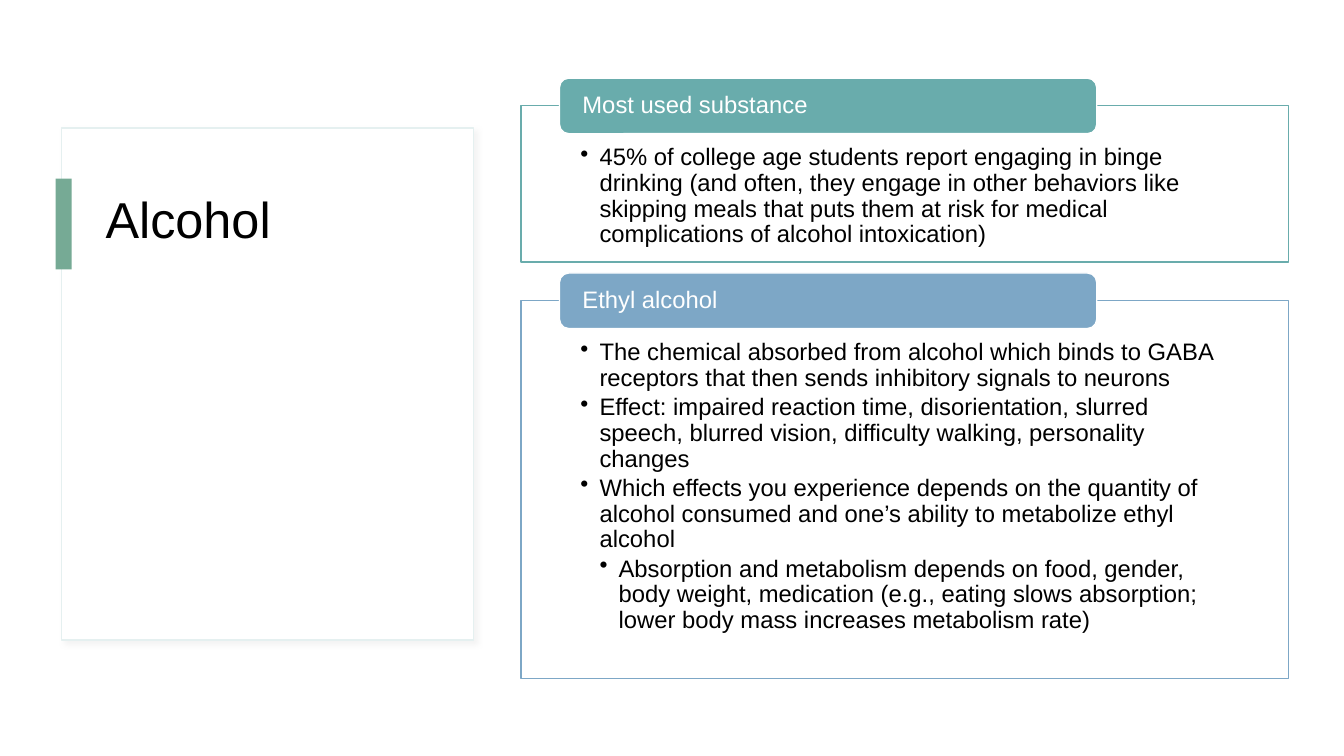
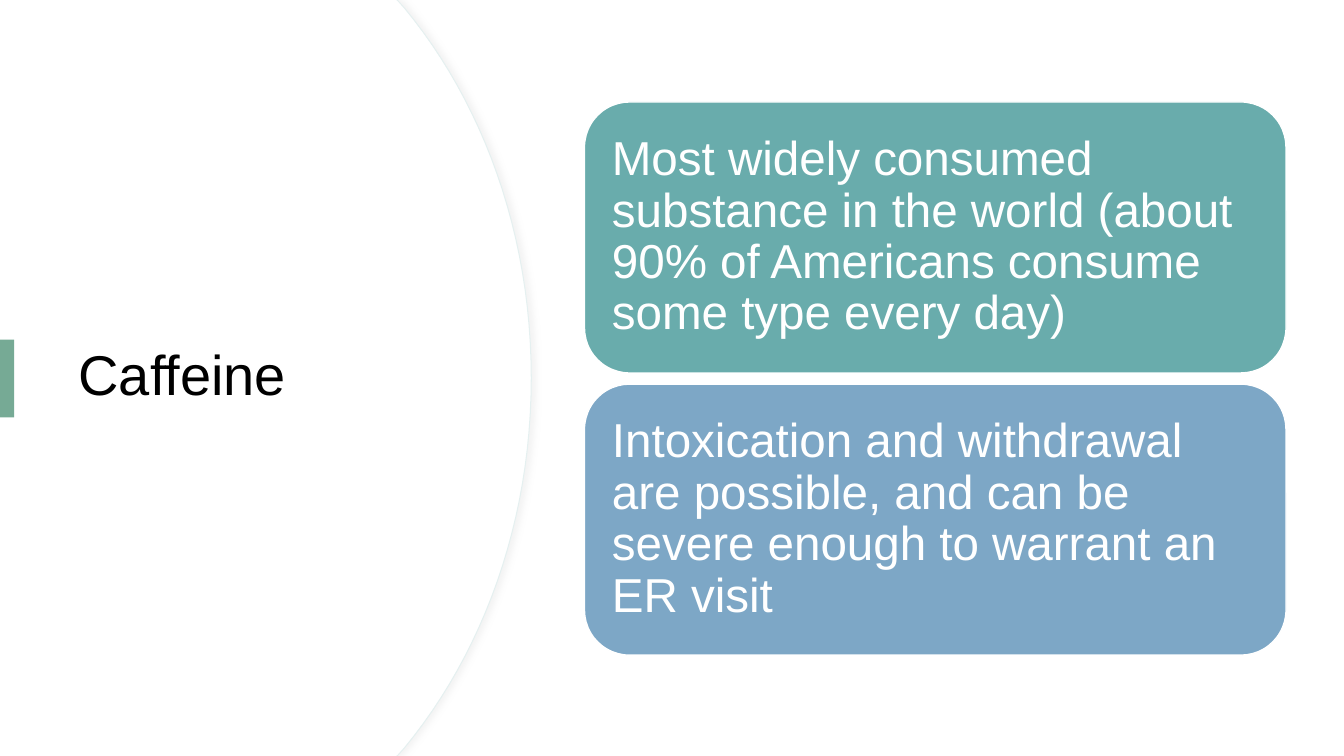
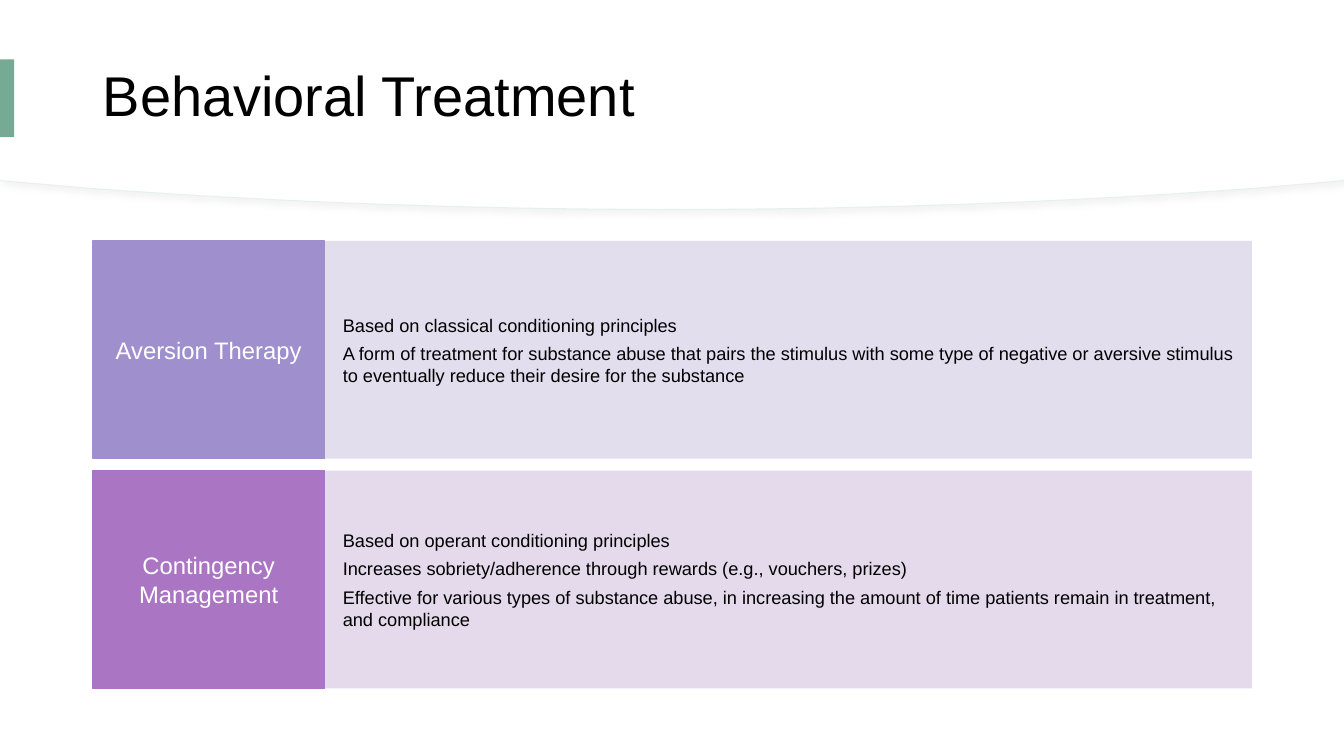
from lxml import etree
from pptx import Presentation
from pptx.dml.color import RGBColor
from pptx.enum.shapes import MSO_SHAPE
from pptx.enum.text import MSO_ANCHOR, PP_ALIGN
from pptx.oxml.ns import qn
from pptx.util import Cm, Pt

RECTANGLE = MSO_SHAPE.RECTANGLE
ROUNDED = MSO_SHAPE.ROUNDED_RECTANGLE
TOP, MIDDLE = MSO_ANCHOR.TOP, MSO_ANCHOR.MIDDLE
LEFT, CENTER = PP_ALIGN.LEFT, PP_ALIGN.CENTER

WIDTH, HEIGHT = 33.87, 19.05
FONT = "Arial"
BULLET_INDENT = 0.48
COLORS = {
    "white": "FFFFFF",
    "black": "000000",
    "edge": "E5F0F0",
    "shadow": "D9D9D9",
    "accent": "76AA95",
    "teal": "69ACAC",
    "blue": "7DA7C6",
    "violet": "9F8FCD",
    "violet_pale": "DFDBED",
    "purple": "AA76C3",
    "purple_pale": "E2D6E9",
}

TITLE = {"color": "black", "anchor": MIDDLE, "spacing": 0.9}
TAB = {"size": 17, "color": "white", "anchor": MIDDLE, "spacing": 0.9,
       "after": 0.35, "insets": (0.51, 0, 0.51, 0)}
BULLETS = {"size": 17, "color": "black", "spacing": 0.9, "after": 0.15,
           "insets": (1.5, 1, 1.5, 0.33)}
CARD = {"size": 34, "color": "white", "anchor": MIDDLE, "spacing": 0.9,
        "after": 0.35, "insets": (0.36, 0.36, 0.36, 0.36)}
LABEL = {"size": 17, "color": "white", "anchor": MIDDLE, "align": CENTER,
         "after": 0.35, "insets": (0.3, 0.53, 0.3, 0.53)}
DETAIL = {"size": 13, "color": "black", "anchor": MIDDLE, "after": 0.35,
          "insets": (0.46, 1.4, 0.46, 1.4)}

SECTIONS = [
    ("Most used substance", "teal", 2.66, 3.94, [
        (1, "45% of college age students report engaging in binge drinking (and often, they engage in other behaviors like skipping meals that puts them at risk for medical complications of alcohol intoxication)"),
    ]),
    ("Ethyl alcohol", "blue", 7.57, 9.53, [
        (1, "The chemical absorbed from alcohol which binds to GABA receptors that then sends inhibitory signals to neurons"),
        (1, "Effect: impaired reaction time, disorientation, slurred speech, blurred vision, difficulty walking, personality changes"),
        (1, "Which effects you experience depends on the quantity of alcohol consumed and one’s ability to metabolize ethyl alcohol"),
        (2, "Absorption and metabolism depends on food, gender, body weight, medication (e.g., eating slows absorption; lower body mass increases metabolism rate)"),
    ]),
]
CARDS = [
    ("teal", "Most widely consumed substance in the world (about 90% of Americans consume some type every day)"),
    ("blue", "Intoxication and withdrawal are possible, and can be severe enough to warrant an ER visit"),
]
TREATMENTS = [
    ("Aversion Therapy", "violet", [
        "Based on classical conditioning principles",
        "A form of treatment for substance abuse that pairs the stimulus with some type of negative or aversive stimulus to eventually reduce their desire for the substance",
    ]),
    ("Contingency Management", "purple", [
        "Based on operant conditioning principles",
        "Increases sobriety/adherence through rewards (e.g., vouchers, prizes)",
        "Effective for various types of substance abuse, in increasing the amount of time patients remain in treatment, and compliance",
    ]),
]


def color(name):
    return RGBColor.from_string(COLORS[name])


def assign(target, values):
    for name, value in values.items():
        setattr(target, name, value)


def paint(shape, fill, line=None, weight=1, opacity=100):
    shape.shadow.inherit = False
    shape.fill.solid()
    shape.fill.fore_color.rgb = color(fill)
    if line:
        shape.line.color.rgb = color(line)
        shape.line.width = Pt(weight)
    else:
        shape.line.fill.background()
    if opacity < 100:
        tint = shape.fill._xPr.find(qn("a:solidFill"))[0]
        etree.SubElement(tint, qn("a:alpha"), val=str(opacity * 1000))


def cast_shadow(shape, angle):
    effects = shape._element.spPr.find(qn("a:effectLst"))
    outer = etree.SubElement(
        effects, qn("a:outerShdw"), blurRad=str(Pt(4)), dist=str(Pt(3)),
        dir=str(angle * 60000), algn="tl", rotWithShape="0")
    tint = etree.SubElement(outer, qn("a:srgbClr"), val=COLORS["shadow"])
    etree.SubElement(tint, qn("a:alpha"), val="30000")


def add_bullet(para, level):
    para.level = level
    properties = para._p.get_or_add_pPr()
    properties.set("marL", str(Cm(BULLET_INDENT * level)))
    properties.set("indent", str(Cm(-BULLET_INDENT)))
    etree.SubElement(properties, qn("a:buChar"), char="•")


def write(box, items, style):
    frame = box.text_frame
    assign(frame, {"word_wrap": True,
                   "vertical_anchor": style.get("anchor", TOP)})
    sides = ("margin_left", "margin_top", "margin_right", "margin_bottom")
    insets = style.get("insets", (0.25, 0.13, 0.25, 0.13))
    assign(frame, {side: Cm(inset) for side, inset in zip(sides, insets)})
    for index, (level, text) in enumerate(items):
        para = frame.add_paragraph() if index else frame.paragraphs[0]
        assign(para, {
            "alignment": style.get("align", LEFT),
            "line_spacing": style.get("spacing", 1.0),
            "space_before": Pt(0),
            "space_after": Pt(style["size"] * style.get("after", 0)),
        })
        if level:
            add_bullet(para, level)
        span = para.add_run()
        span.text = text
        assign(span.font, {"name": FONT, "size": Pt(style["size"])})
        span.font.color.rgb = color(style["color"])


def add_block(page, kind, place, **look):
    block = page.shapes.add_shape(kind, *map(Cm, place))
    paint(block, **look)
    return block


def add_title(page, text, place, accent, **changes):
    box = page.shapes.add_textbox(*map(Cm, place))
    write(box, [(0, text)], {**TITLE, "size": 40, **changes})
    add_block(page, RECTANGLE, accent, fill="accent")


def bezier(start, first, second, end, steps=24):
    for step in range(steps + 1):
        t = step / steps
        weights = ((1 - t) ** 3, 3 * t * (1 - t) ** 2, 3 * t * t * (1 - t), t ** 3)
        yield tuple(sum(weight * value for weight, value in zip(weights, axis))
                    for axis in zip(start, first, second, end))


def add_bowed_panel(page, span, corner, curve, upright, angle):
    half = [corner, *bezier(*curve)]
    edge = half + [(span - along, depth) for along, depth in reversed(half[:-1])]
    for trim, line in ((0, "edge"), (0.03, None)):
        outline = [(0, 0), *((along, depth - trim) for along, depth in edge), (span, 0)]
        points = [(Cm(depth), Cm(along)) if upright else (Cm(along), Cm(depth))
                  for along, depth in outline]
        builder = page.shapes.build_freeform(*points[0])
        builder.add_line_segments(points[1:], close=True)
        panel = builder.convert_to_shape()
        paint(panel, "white", line, 0.75)
        if line:
            cast_shadow(panel, angle)


def add_section(page, heading, hue, top, height, items):
    body = add_block(page, RECTANGLE, (13.13, top, 19.35, height),
                     fill="white", line=hue, opacity=90)
    write(body, items, BULLETS)
    tab = add_block(page, ROUNDED, (14.1, top - 0.69, 13.54, 1.4),
                    fill=hue, line="white")
    write(tab, [(0, heading)], TAB)


def add_treatment(page, top, heading, hue, lines):
    pale = hue + "_pale"
    detail = add_block(page, RECTANGLE, (8.18, top, 23.37, 5.49),
                       fill=pale, opacity=90)
    write(detail, [(0, line) for line in lines], DETAIL)
    label = add_block(page, RECTANGLE, (2.34, top, 5.84, 5.49), fill=hue, line=hue)
    write(label, [(0, heading)], LABEL)


def build_alcohol(page):
    panel = add_block(page, RECTANGLE, (1.55, 3.23, 10.39, 12.9),
                      fill="white", line="edge")
    cast_shadow(panel, 45)
    add_title(page, "Alcohol", (2.41, 4.78, 8.61, 9.78), (1.4, 4.5, 0.41, 2.29),
              size=36, anchor=TOP)
    for section in SECTIONS:
        add_section(page, *section)


def build_caffeine(page):
    curve = ((0.2, 10.19), (2.59, 12.17), (5.89, 13.39), (HEIGHT / 2, 13.39))
    add_bowed_panel(page, HEIGHT, (0, 10.01), curve, True, 0)
    add_title(page, "Caffeine", (1.73, 3.23, 10.01, 12.57), (0, 8.56, 0.36, 1.96))
    for index, (hue, text) in enumerate(CARDS):
        card = add_block(page, ROUNDED, (14.73, 2.57 + 7.11 * index, 17.68, 6.83),
                         fill=hue, line="white")
        write(card, [(0, text)], CARD)


def build_treatment(page):
    curve = ((2.31, 4.75), (6.81, 5.08), (11.76, 5.28), (WIDTH / 2, 5.28))
    add_bowed_panel(page, WIDTH, (0, 4.55), curve, False, 45)
    add_title(page, "Behavioral Treatment", (2.34, 0.71, 29.21, 3.53),
              (0, 1.5, 0.36, 1.96))
    for index, treatment in enumerate(TREATMENTS):
        add_treatment(page, 6.07 + 5.79 * index, *treatment)


def main():
    deck = Presentation()
    assign(deck, {"slide_width": Cm(WIDTH), "slide_height": Cm(HEIGHT)})
    for build in (build_alcohol, build_caffeine, build_treatment):
        build(deck.slides.add_slide(deck.slide_layouts[6]))
    deck.save("out.pptx")


if __name__ == "__main__":
    main()
